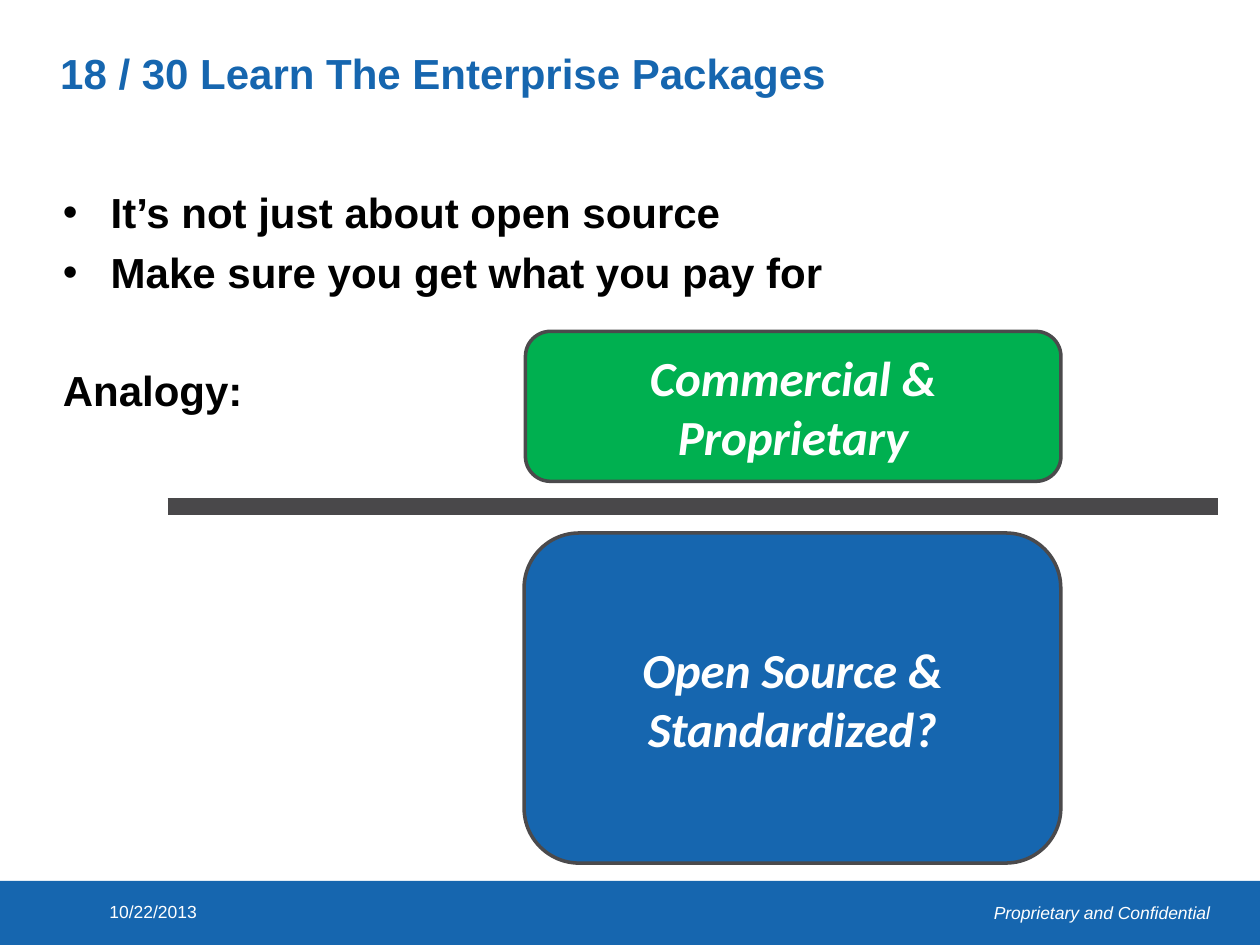
from dataclasses import dataclass

from lxml import etree
from pptx import Presentation
from pptx.dml.color import RGBColor
from pptx.enum.shapes import MSO_CONNECTOR, MSO_SHAPE
from pptx.enum.text import MSO_ANCHOR, PP_ALIGN
from pptx.oxml.ns import qn
from pptx.util import Pt

EMU_PER_PX = 9144  # 100 px to the inch
LEFT, CENTER, RIGHT = PP_ALIGN.LEFT, PP_ALIGN.CENTER, PP_ALIGN.RIGHT
TOP, MIDDLE = MSO_ANCHOR.TOP, MSO_ANCHOR.MIDDLE
RECTANGLE, ROUNDED = MSO_SHAPE.RECTANGLE, MSO_SHAPE.ROUNDED_RECTANGLE
STRAIGHT = MSO_CONNECTOR.STRAIGHT


@dataclass(frozen=True)
class Theme:
    blue: str = "1666AF"
    green: str = "00B050"
    outline: str = "4B4A4C"
    divider: str = "49484A"
    white: str = "FFFFFF"
    black: str = "000000"
    text_font: str = "Arial"
    block_font: str = "Calibri"
    heading_size: int = 24
    block_size: int = 28
    footer_size: int = 10
    outline_width: int = 2
    divider_width: int = 10


@dataclass(frozen=True)
class Box:
    left: int
    top: int
    width: int
    height: int

    def emu(self) -> tuple[int, ...]:
        return tuple(px(n) for n in (self.left, self.top, self.width, self.height))


@dataclass(frozen=True)
class Block:
    text: str
    box: Box
    fill: str


@dataclass(frozen=True)
class BodyLine:
    text: str
    space_before: float = 0
    bullet: bool = False


THEME = Theme()
BULLET_INDENT = 38

BLOCKS = (
    Block("Open Source & Standardized?", Box(416, 423, 426, 262), THEME.blue),
    Block("Commercial & Proprietary", Box(417, 263, 425, 119), THEME.green),
)
BODY = (
    BodyLine("It’s not just about open source", bullet=True),
    BodyLine("Make sure you get what you pay for", 5.5, bullet=True),
    BodyLine("Analogy:", 38.5),
)


def px(length: int) -> int:
    return length * EMU_PER_PX


def rgb(color: str) -> RGBColor:
    return RGBColor.from_string(color)


def add_bullet(paragraph) -> None:
    properties = paragraph._p.get_or_add_pPr()
    properties.set("marL", str(px(BULLET_INDENT)))
    properties.set("indent", str(-px(BULLET_INDENT)))
    etree.SubElement(properties, qn("a:buFont"), typeface=THEME.text_font)
    etree.SubElement(properties, qn("a:buChar"), char="•")


def write(paragraph, text: str, *, size: int, color: str, font: str = THEME.text_font,
          bold: bool = False, italic: bool = False, align=LEFT,
          line_spacing: float | None = None, space_before: float = 0,
          bullet: bool = False) -> None:
    paragraph.alignment = align
    if line_spacing:
        paragraph.line_spacing = line_spacing
    if space_before:
        paragraph.space_before = Pt(space_before)
    if bullet:
        add_bullet(paragraph)
    run = paragraph.add_run()
    run.text = text
    run.font.name, run.font.size = font, Pt(size)
    run.font.bold, run.font.italic = bold, italic
    run.font.color.rgb = rgb(color)


def add_text_frame(slide, box: Box):
    frame = slide.shapes.add_textbox(*box.emu()).text_frame
    frame.word_wrap = True
    frame.vertical_anchor = TOP
    return frame


def add_filled_shape(slide, preset, box: Box, fill: str):
    shape = slide.shapes.add_shape(preset, *box.emu())
    shape.shadow.inherit = False
    shape.fill.solid()
    shape.fill.fore_color.rgb = rgb(fill)
    shape.line.fill.background()
    return shape


def add_block(slide, block: Block) -> None:
    shape = add_filled_shape(slide, ROUNDED, block.box, block.fill)
    shape.line.color.rgb = rgb(THEME.outline)
    shape.line.width = Pt(THEME.outline_width)
    frame = shape.text_frame
    frame.word_wrap = True
    frame.vertical_anchor = MIDDLE
    write(frame.paragraphs[0], block.text, size=THEME.block_size, color=THEME.white,
          font=THEME.block_font, bold=True, italic=True, align=CENTER)


def add_divider(slide, left: int, right: int, y: int) -> None:
    line = slide.shapes.add_connector(STRAIGHT, px(left), px(y), px(right), px(y))
    line.line.color.rgb = rgb(THEME.divider)
    line.line.width = Pt(THEME.divider_width)
    etree.SubElement(line._element.spPr, qn("a:effectLst"))


def add_footer(slide) -> None:
    add_filled_shape(slide, RECTANGLE, Box(0, 699, 1000, 51), THEME.blue)
    notice = add_text_frame(slide, Box(735, 711, 235, 32))
    write(notice.paragraphs[0], "Proprietary and Confidential", size=THEME.footer_size,
          color=THEME.white, italic=True, align=RIGHT)
    date = add_text_frame(slide, Box(77, 710, 208, 31))
    write(date.paragraphs[0], "10/22/2013", size=THEME.footer_size, color=THEME.white)


def add_body(slide) -> None:
    frame = add_text_frame(slide, Box(40, 143, 879, 523))
    for index, line in enumerate(BODY):
        paragraph = frame.add_paragraph() if index else frame.paragraphs[0]
        write(paragraph, line.text, size=THEME.heading_size, color=THEME.black, bold=True,
              space_before=line.space_before, bullet=line.bullet)


def main() -> None:
    presentation = Presentation()
    presentation.slide_width, presentation.slide_height = px(1000), px(750)
    slide = presentation.slides.add_slide(presentation.slide_layouts[6])

    # Footer band
    add_footer(slide)

    # Title and bullets
    title = add_text_frame(slide, Box(38, 38, 807, 74))
    write(title.paragraphs[0], "18 / 30 Learn The Enterprise Packages",
          size=THEME.heading_size, color=THEME.blue, bold=True, line_spacing=0.88)
    add_body(slide)

    # Analogy: blocks above and below the divider
    for block in BLOCKS:
        add_block(slide, block)
    add_divider(slide, 133, 967, 402)

    presentation.save("out.pptx")


if __name__ == "__main__":
    main()
